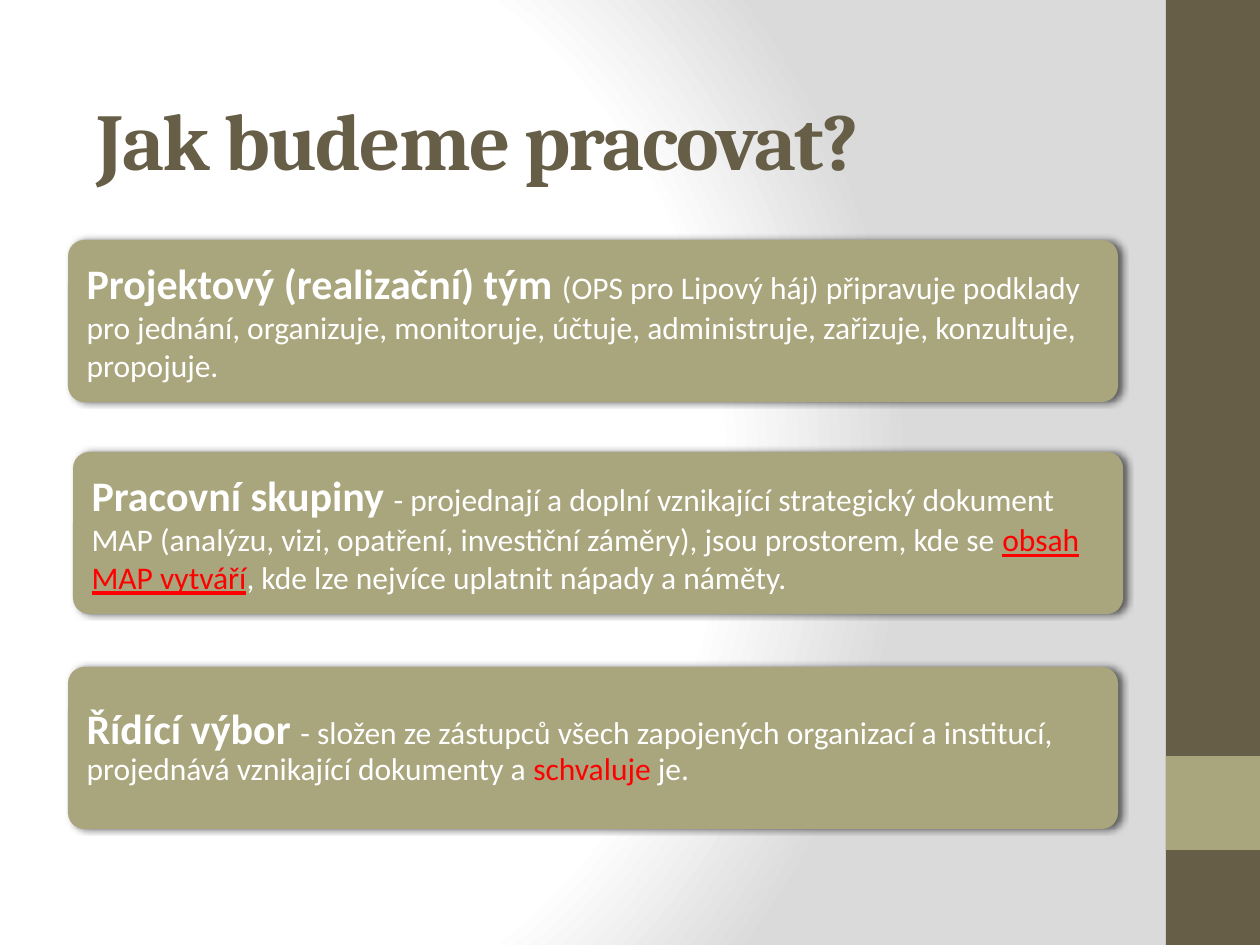
from lxml import etree
from pptx import Presentation
from pptx import util as u
from pptx.dml.color import RGBColor
from pptx.enum import shapes, text
from pptx.oxml import ns

EMU_PER_PX = 914400 / 126
BROWN = RGBColor(0x67, 0x5E, 0x47)
OLIVE = RGBColor(0xA9, 0xA5, 0x7C)
WHITE = RGBColor(0xFF, 0xFF, 0xFF)
GREY = RGBColor(0xDA, 0xDA, 0xDA)
BLACK = RGBColor(0, 0, 0)
RED = RGBColor(0xFF, 0, 0)

HEAD = {"size": u.Pt(24), "bold": True}
BODY = {"size": u.Pt(18), "bold": False}
ACCENT = BODY | {"color": RED}
LINK = ACCENT | {"underline": True}

CARD_SIZE = (1050, 162)
# left, top, line spacing, spans
CARDS = [
    (68, 240, 1.0, [
        ("Projektový (realizační) tým ", HEAD),
        ("(OPS pro Lipový háj) připravuje podklady pro jednání, organizuje, "
         "monitoruje, účtuje, administruje, zařizuje, konzultuje, propojuje.", BODY)]),
    (73, 452, 1.0, [
        ("Pracovní skupiny ", HEAD),
        ("- projednají a doplní vznikající strategický dokument MAP (analýzu, vizi, "
         "opatření, investiční záměry), jsou prostorem, kde se ", BODY),
        ("obsah MAP vytváří", LINK),
        (", kde lze nejvíce uplatnit nápady a náměty.", BODY)]),
    (68, 667, 0.9, [
        ("Řídící výbor ", HEAD),
        ("- složen ze zástupců všech zapojených organizací a institucí, "
         "projednává vznikající dokumenty a ", BODY),
        ("schvaluje", ACCENT),
        (" je.", BODY)]),
]


def px(*lengths):
    return [u.Emu(round(length * EMU_PER_PX)) for length in lengths]


def add_child(parent, tag, **attributes):
    child = etree.SubElement(parent, ns.qn(tag))
    for name, value in attributes.items():
        child.set(name, str(value))
    return child


def set_background(page):
    """Radial gradient, white in the middle left and grey towards the right."""
    fill = page.background.fill
    fill.gradient()
    gradient = page.background._cSld.bg.bgPr.find(ns.qn("a:gradFill"))
    for child in list(gradient):
        gradient.remove(child)
    stops = add_child(gradient, "a:gsLst")
    for position, color in ((0, WHITE), (75000, WHITE), (100000, GREY)):
        add_child(add_child(stops, "a:gs", pos=position), "a:srgbClr", val=color)
    circle = add_child(gradient, "a:path", path="circle")
    add_child(circle, "a:fillToRect", l=20000, t=50000, r=100000, b=50000)


def add_box(page, kind, place, color):
    box = page.shapes.add_shape(kind, *px(*place))
    box.shadow.inherit = False
    box.fill.solid()
    box.fill.fore_color.rgb = color
    box.line.fill.background()
    return box


def add_shadow(box):
    effects = box._element.spPr.find(ns.qn("a:effectLst"))
    shadow = add_child(effects, "a:outerShdw", blurRad=u.Pt(4), dist=u.Pt(2),
                       dir=0, rotWithShape=0)
    add_child(add_child(shadow, "a:srgbClr", val=BLACK), "a:alpha", val=60000)


def add_span(para, words, formats):
    span = para.add_run()
    span.text = words
    values = {"name": "Calibri", "color": WHITE} | formats
    span.font.color.rgb = values.pop("color")
    for name, value in values.items():
        setattr(span.font, name, value)
    return span


def set_frame(frame, margin):
    formats = {"word_wrap": True, "auto_size": text.MSO_AUTO_SIZE.NONE,
               "vertical_anchor": text.MSO_ANCHOR.MIDDLE,
               "margin_left": margin, "margin_right": margin}
    for name, value in formats.items():
        setattr(frame, name, value)
    frame.paragraphs[0].alignment = text.PP_ALIGN.LEFT
    return frame.paragraphs[0]


def set_title(page, words):
    title = page.shapes.title
    title.left, title.top, title.width, title.height = px(84, 59, 1050, 158)
    para = set_frame(title.text_frame, u.Inches(0.1))
    span = add_span(para, words, {"name": "Cambria", "size": u.Pt(46),
                                  "bold": True, "color": BROWN})
    span.font._element.set("spc", "-100")


def add_card(page, left, top, spacing, spans):
    card = add_box(page, shapes.MSO_SHAPE.ROUNDED_RECTANGLE,
                   (left, top, *CARD_SIZE), OLIVE)
    card.adjustments[0] = 0.1
    add_shadow(card)
    para = set_frame(card.text_frame, u.Inches(0.11))
    para.line_spacing = spacing
    for words, formats in spans:
        add_span(para, words, formats)


def main():
    deck = Presentation()
    deck.slide_width, deck.slide_height = px(1260, 945)
    page = deck.slides.add_slide(deck.slide_layouts[5])
    set_background(page)
    for place, color in (((1166, 0, 94, 945), BROWN), ((1166, 756, 94, 94), OLIVE)):
        add_box(page, shapes.MSO_SHAPE.RECTANGLE, place, color)
    set_title(page, "Jak budeme pracovat?")
    for card in CARDS:
        add_card(page, *card)
    deck.save("out.pptx")


if __name__ == "__main__":
    main()
